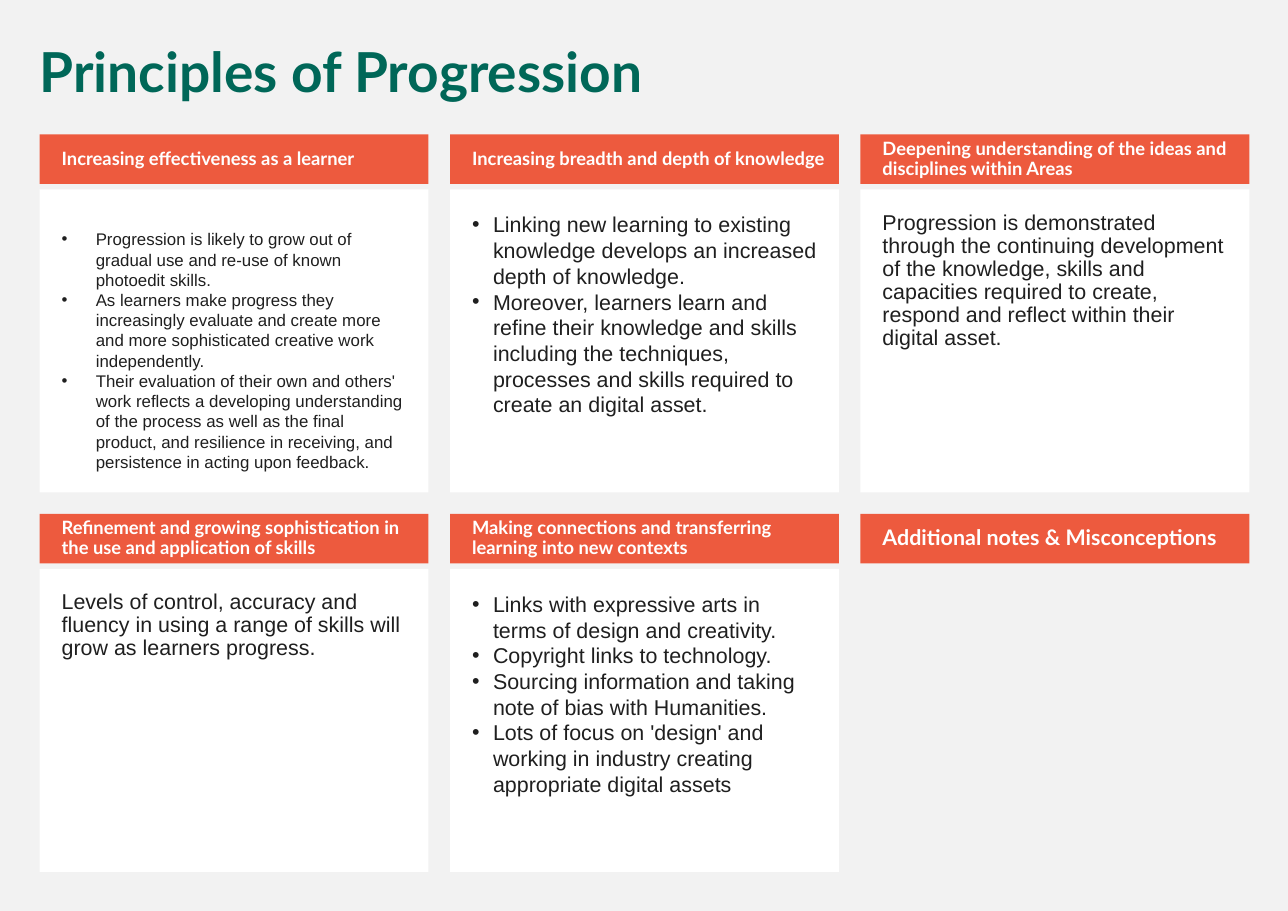
"""Builds the Principles of Progression slide: a grid of six titled cards."""
from dataclasses import dataclass

from lxml.etree import SubElement
from pptx import Presentation
from pptx.dml.color import RGBColor as RGB
from pptx.enum.shapes import MSO_SHAPE as SHAPE
from pptx.enum.text import MSO_ANCHOR as ANCHOR, PP_ALIGN as ALIGN
from pptx.oxml.ns import qn
from pptx.util import Inches, Pt

COLORS = {"page": "F2F2F2", "title": "006758", "head": "ED5A3E",
          "card": "FFFFFF", "head_text": "FFFFFF", "body_text": "1F1F1F"}
LEFT, TOP = 0.36, 1.22
COL_STEP, ROW_STEP = 3.725, 3.445
CARD_W, HEAD_H, BODY_DROP, BODY_H = 3.53, 0.45, 0.5, 2.75
HEAD_INSETS = (0.2, 0.05, 0.1, 0.05)
BODY_INSETS = (0.2, 0.2, 0.2, 0.2)


@dataclass(frozen=True)
class Style:
    font: str
    size: float
    color: str
    bold: bool = False
    spacing: float = 0.9
    indent: float = 0


@dataclass(frozen=True)
class Card:
    col: int
    row: int
    heading: str
    paras: tuple[str, ...] = ()
    size: float = 14
    indent: float = 0
    head_size: float = 12
    body_top: float = 0.2


CARDS = (
    Card(0, 0, "Increasing effectiveness as a learner", (
        "Progression is likely to grow out of gradual use and re-use of known photoedit skills.",
        "As learners make progress they increasingly evaluate and create more "
        "and more sophisticated creative work independently. ",
        "Their evaluation of their own and others' work reflects a developing "
        "understanding of the process as well as the final product, and resilience "
        "in receiving, and persistence in acting upon feedback."),
        size=11, indent=0.31, body_top=0.36),
    Card(1, 0, "Increasing breadth and depth of knowledge", (
        "Linking new learning to existing knowledge develops an increased depth of knowledge.",
        "Moreover, learners learn and refine their knowledge and skills including the "
        "techniques, processes and skills required to create an digital asset."),
        indent=0.19),
    Card(2, 0, "Deepening understanding of the ideas and disciplines within Areas", (
        "Progression is demonstrated through the continuing development of the knowledge, "
        "skills and capacities required to create, respond and reflect within "
        "their digital asset.",)),
    Card(0, 1, "Refinement and growing sophistication in the use and application of skills", (
        "Levels of control, accuracy and fluency in using a range of skills will grow "
        "as learners progress.",)),
    Card(1, 1, "Making connections and transferring learning into new contexts", (
        "Links with expressive arts in terms of design and creativity. ",
        "Copyright links to technology.",
        "Sourcing information and taking note of bias with Humanities. ",
        "Lots of focus on 'design' and working in industry creating appropriate "
        "digital assets"),
        indent=0.19),
    Card(2, 1, "Additional notes & Misconceptions", head_size=14),
)


def rgb(name: str) -> RGB:
    return RGB.from_string(COLORS[name])


def add_bullet(p, indent: float) -> None:
    pPr = p._p.get_or_add_pPr()
    pPr.set("marL", str(Inches(indent)))
    pPr.set("indent", str(-Inches(indent)))
    SubElement(pPr, qn("a:buFont")).set("typeface", "Arial")
    SubElement(pPr, qn("a:buChar")).set("char", "•")


def write(tf, paras: tuple[str, ...], style: Style, insets: tuple[float, ...],
          anchor=ANCHOR.TOP) -> None:
    tf.word_wrap = True
    tf.vertical_anchor = anchor
    tf.margin_left, tf.margin_top, tf.margin_right, tf.margin_bottom = map(Inches, insets)
    for i, text in enumerate(paras):
        p = tf.add_paragraph() if i else tf.paragraphs[0]
        p.alignment = ALIGN.LEFT
        p.line_spacing = style.spacing
        if style.indent:
            add_bullet(p, style.indent)
        r = p.add_run()
        r.text = text
        r.font.name, r.font.size, r.font.bold = style.font, Pt(style.size), style.bold
        r.font.color.rgb = rgb(style.color)


def add_panel(slide, x: float, y: float, h: float, fill: str):
    sp = slide.shapes.add_shape(SHAPE.RECTANGLE, *map(Inches, (x, y, CARD_W, h)))
    sp.shadow.inherit = False
    sp.fill.solid()
    sp.fill.fore_color.rgb = rgb(fill)
    sp.line.fill.background()
    return sp


def add_card(slide, card: Card) -> None:
    x, y = LEFT + card.col * COL_STEP, TOP + card.row * ROW_STEP
    if card.paras:
        body = add_panel(slide, x, y + BODY_DROP, BODY_H, "card")
        left, _, right, bottom = BODY_INSETS
        spacing = 1.0 if card.indent else 0.9
        style = Style("Arial", card.size, "body_text", spacing=spacing, indent=card.indent)
        write(body.text_frame, card.paras, style, (left, card.body_top, right, bottom))
    head = add_panel(slide, x, y, HEAD_H, "head")
    style = Style("Lato", card.head_size, "head_text", bold=True)
    write(head.text_frame, (card.heading,), style, HEAD_INSETS, ANCHOR.MIDDLE)


def main() -> None:
    prs = Presentation()
    prs.slide_width, prs.slide_height = Inches(11.69), Inches(8.27)
    slide = prs.slides.add_slide(prs.slide_layouts[6])
    slide.background.fill.solid()
    slide.background.fill.fore_color.rgb = rgb("page")
    title = slide.shapes.add_textbox(*map(Inches, (0.26, 0.36, 11.08, 0.65)))
    write(title.text_frame, ("Principles of Progression",),
          Style("Lato", 36, "title", bold=True), (0.1, 0.05, 0.1, 0.05))
    for card in CARDS:
        add_card(slide, card)
    prs.save("out.pptx")


if __name__ == "__main__":
    main()
